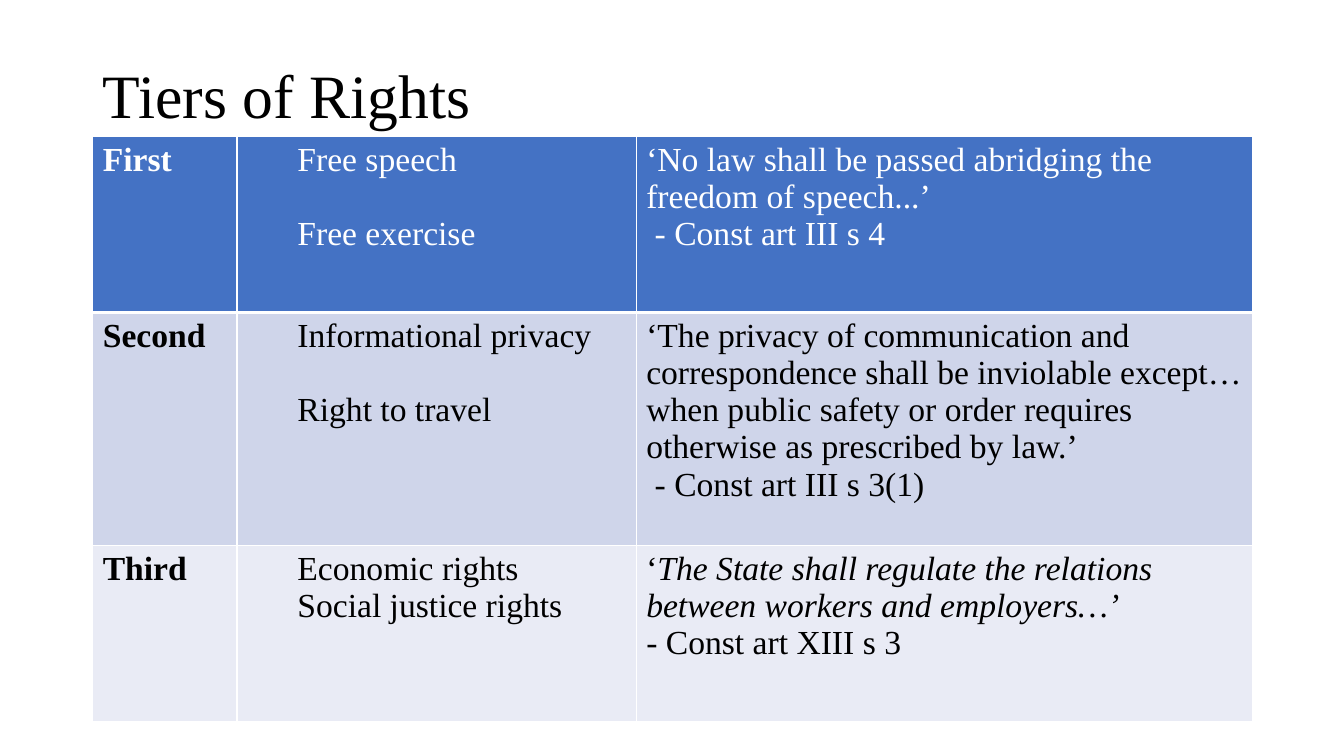
"""Build the slide that sets out three tiers of rights in a table."""
from lxml.etree import SubElement
from pptx import Presentation
from pptx.dml.color import RGBColor
from pptx.enum.text import MSO_ANCHOR, MSO_AUTO_SIZE, PP_ALIGN
from pptx.oxml.ns import qn
from pptx.util import Inches, Pt

FONT = "Times New Roman"
COLORS = {"white": "FFFFFF", "black": "000000", "header": "4472C4",
          "band": "CFD5EA", "light": "E9EBF5"}
TITLE = "Tiers of Rights"
TIERS = [
    {"name": "First", "fill": "header", "color": "white", "height": 1.75, "gap": 26.6,
     "rights": ["Free speech", "Free exercise"],
     "source": [[("‘No law shall be passed abridging the freedom of speech...’", False)],
                [(" - Const art III s 4", False)]]},
    {"name": "Second", "fill": "band", "color": "black", "height": 2.31, "gap": 26.6,
     "rights": ["Informational privacy", "Right to travel"],
     "source": [[("‘The privacy of communication and correspondence shall be inviolable "
                  "except…when public safety or order requires otherwise as prescribed "
                  "by law.’", False)],
                [(" - Const art III s 3(1)", False)]]},
    {"name": "Third", "fill": "light", "color": "black", "height": 1.75, "gap": 0,
     "rights": ["Economic rights", "Social justice rights"],
     "source": [[("‘", False),
                 ("The State shall regulate the relations between workers and "
                  "employers…’", True)],
                [("- ", True), ("Const art XIII s 3", False)]]},
]
COLUMN_WIDTHS = [1.43, 3.96, 6.11]
LEFT, TABLE_TOP = 0.92, 1.35
WIDTH = sum(COLUMN_WIDTHS)


def add_text(paragraph, text, size=24, color="black", bold=False, italic=False):
    run = paragraph.add_run()
    run.text = text
    run.font.name = FONT
    run.font.size = Pt(size)
    run.font.bold = bold
    run.font.italic = italic
    run.font.color.rgb = RGBColor.from_string(COLORS[color])


def fill_cell(cell, lines, color, bold=False, indent=0, gap=0):
    frame = cell.text_frame
    for index, line in enumerate(lines):
        paragraph = frame.add_paragraph() if index else frame.paragraphs[0]
        properties = paragraph._p.get_or_add_pPr()
        properties.set("marL", str(Inches(indent)))
        properties.set("indent", "0")
        paragraph.space_before = Pt(gap if index else 0)
        for text, italic in line:
            add_text(paragraph, text, color=color, bold=bold, italic=italic)


def set_borders(cell, top, bottom):
    properties = cell._tc.get_or_add_tcPr()
    for side, width in {"L": 1, "R": 1, "T": top, "B": bottom}.items():
        line = SubElement(properties, qn(f"a:ln{side}"), w=str(Pt(width)))
        fill = SubElement(line, qn("a:solidFill"))
        SubElement(fill, qn("a:srgbClr"), val=COLORS["white"])


def add_title(slide):
    title = slide.shapes.title
    title.left, title.top = Inches(LEFT), Inches(0.25)
    title.width, title.height = Inches(WIDTH), Inches(1.45)
    frame = title.text_frame
    frame.word_wrap = True
    frame.auto_size = MSO_AUTO_SIZE.NONE
    frame.vertical_anchor = MSO_ANCHOR.MIDDLE
    paragraph = frame.paragraphs[0]
    paragraph.alignment = PP_ALIGN.LEFT
    paragraph.line_spacing = 0.9
    add_text(paragraph, TITLE, size=44)


def add_tiers(slide):
    height = sum(tier["height"] for tier in TIERS)
    table = slide.shapes.add_table(
        len(TIERS), len(COLUMN_WIDTHS), Inches(LEFT), Inches(TABLE_TOP),
        Inches(WIDTH), Inches(height)).table
    for column, width in zip(table.columns, COLUMN_WIDTHS):
        column.width = Inches(width)
    for index, (row, tier) in enumerate(zip(table.rows, TIERS)):
        row.height = Inches(tier["height"])
        name, rights, source = row.cells
        color = tier["color"]
        fill_cell(name, [[(tier["name"], False)]], color, bold=True)
        fill_cell(rights, [[(right, False)] for right in tier["rights"]], color,
                  indent=0.5, gap=tier["gap"])
        fill_cell(source, tier["source"], color)
        for cell in row.cells:
            set_borders(cell, top=3 if index == 1 else 1, bottom=3 if index == 0 else 1)
            cell.fill.solid()
            cell.fill.fore_color.rgb = RGBColor.from_string(COLORS[tier["fill"]])


def main():
    presentation = Presentation()
    presentation.slide_width = Inches(13.33)
    presentation.slide_height = Inches(7.5)
    slide = presentation.slides.add_slide(presentation.slide_layouts[5])
    add_title(slide)
    add_tiers(slide)
    presentation.save("out.pptx")


if __name__ == "__main__":
    main()
